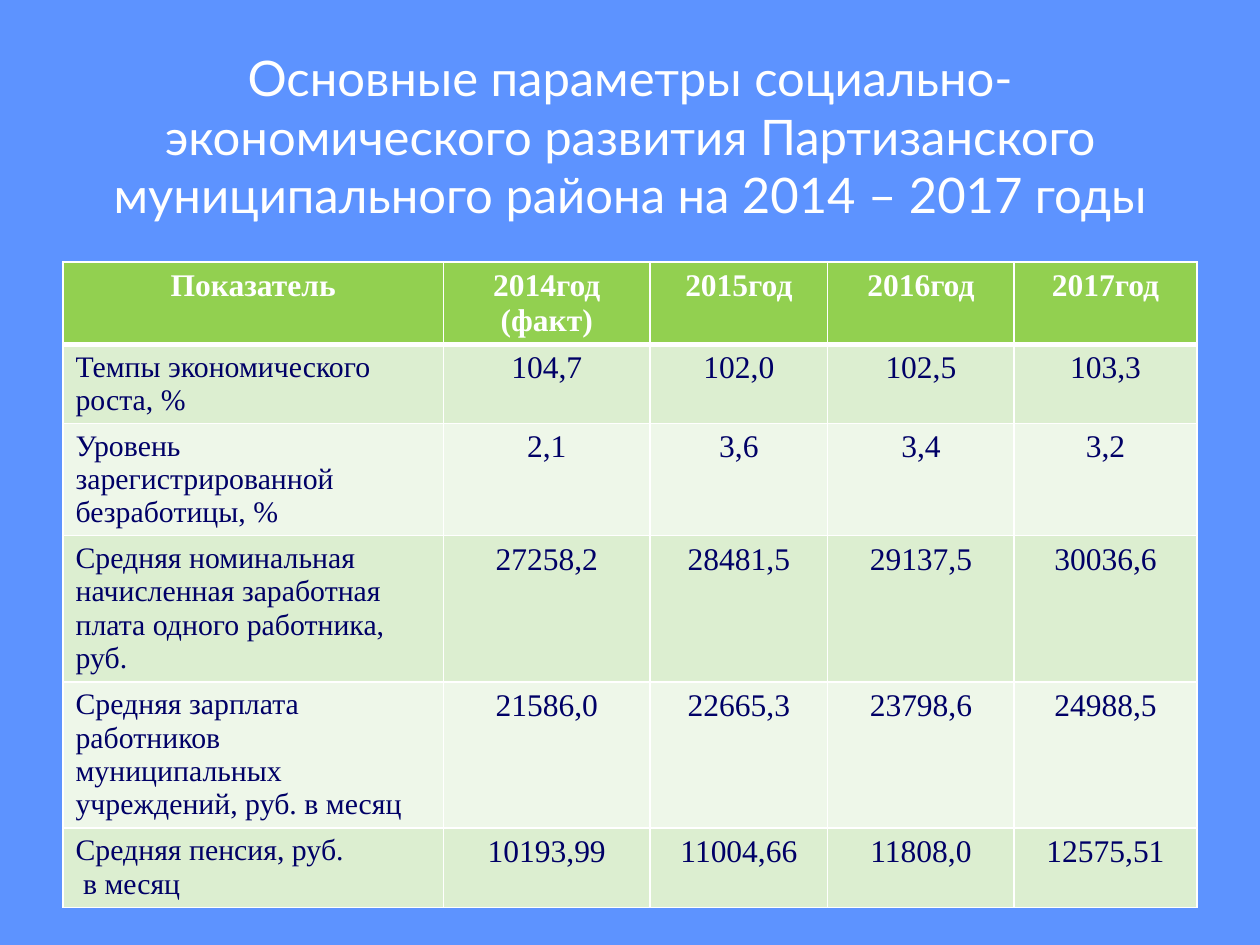
"""Build a slide with a table of district development indicators."""
import pptx
import pptx.dml.color
import pptx.enum.text
import pptx.oxml
import pptx.oxml.ns
import pptx.util

Inches = pptx.util.Inches
Pt = pptx.util.Pt
RGBColor = pptx.dml.color.RGBColor
ALIGN = pptx.enum.text.PP_ALIGN
ANCHOR = pptx.enum.text.MSO_ANCHOR

BACKGROUND = RGBColor(0x5D, 0x93, 0xFF)
WHITE = RGBColor(0xFF, 0xFF, 0xFF)
NAVY = RGBColor(0x00, 0x00, 0x66)
HEADER_GREEN = RGBColor(0x92, 0xD0, 0x50)
BAND_GREENS = (RGBColor(0xDC, 0xEE, 0xD0), RGBColor(0xEE, 0xF7, 0xE9))

TITLE = ("Основные параметры социально-экономического развития "
         "Партизанского муниципального района на 2014 – 2017 годы")
COLUMN_WIDTHS = (3.02, 1.64, 1.41, 1.48, 1.45)
ROW_HEIGHTS = (0.65, 0.62, 0.89, 1.16, 1.16, 0.63)
ROWS = (
    ("Показатель", "2014год\n(факт)", "2015год", "2016год", "2017год"),
    ("Темпы экономического роста, %", "104,7", "102,0", "102,5", "103,3"),
    ("Уровень зарегистрированной безработицы, %", "2,1", "3,6", "3,4", "3,2"),
    ("Средняя номинальная начисленная заработная плата одного работника, руб.",
     "27258,2", "28481,5", "29137,5", "30036,6"),
    ("Средняя зарплата работников муниципальных учреждений, руб. в месяц",
     "21586,0", "22665,3", "23798,6", "24988,5"),
    ("Средняя пенсия, руб.\n в месяц",
     "10193,99", "11004,66", "11808,0", "12575,51"),
)


def write_text(text_frame, text, size=18, color=NAVY, bold=False,
               align=ALIGN.CENTER, font="Times New Roman"):
    """Fill a text frame with one paragraph per line of text."""
    text_frame.text = text
    for paragraph in text_frame.paragraphs:
        paragraph.alignment = align
        for run in paragraph.runs:
            run.font.name = font
            run.font.size = Pt(size)
            run.font.bold = bold
            run.font.color.rgb = color


def set_border(cell, side, width, color=WHITE):
    """Draw a solid border on one side (L, R, T or B) of a cell."""
    properties = cell._tc.get_or_add_tcPr()
    properties.append(pptx.oxml.parse_xml(
        f'<a:ln{side} {pptx.oxml.ns.nsdecls("a")} w="{Pt(width)}">'
        f'<a:solidFill><a:srgbClr val="{color}"/></a:solidFill></a:ln{side}>'))


def format_cell(cell, row, column, text):
    """Write a cell and set its borders and fill for its place in the table."""
    header = row == 0
    label = column == 0 and not header
    write_text(cell.text_frame, text,
               size=17 if label else 18,
               color=WHITE if header else NAVY,
               bold=header,
               align=ALIGN.LEFT if label else ALIGN.CENTER)
    widths = {"L": 1, "R": 1, "T": 3 if row == 1 else 1, "B": 3 if header else 1}
    for side, width in widths.items():
        set_border(cell, side, width)
    cell.fill.solid()
    cell.fill.fore_color.rgb = HEADER_GREEN if header else BAND_GREENS[(row - 1) % 2]


def add_title(slide):
    """Place and format the title placeholder."""
    title = slide.shapes.title
    title.left, title.top = Inches(0.5), Inches(0.32)
    title.width, title.height = Inches(9), Inches(1.51)
    title.text_frame.word_wrap = True
    title.text_frame.vertical_anchor = ANCHOR.MIDDLE
    write_text(title.text_frame, TITLE, size=28, color=WHITE, font="Lato")


def add_indicator_table(slide):
    """Add the table of indicators by year."""
    table = slide.shapes.add_table(
        len(ROWS), len(COLUMN_WIDTHS), Inches(0.5), Inches(2.08),
        Inches(sum(COLUMN_WIDTHS)), Inches(sum(ROW_HEIGHTS))).table
    for column, width in zip(table.columns, COLUMN_WIDTHS):
        column.width = Inches(width)
    for row, height in zip(table.rows, ROW_HEIGHTS):
        row.height = Inches(height)
    for row_index, texts in enumerate(ROWS):
        for column_index, text in enumerate(texts):
            format_cell(table.cell(row_index, column_index),
                        row_index, column_index, text)


def main():
    """Build and save the presentation."""
    presentation = pptx.Presentation()
    presentation.slide_width = Inches(10)
    presentation.slide_height = Inches(7.5)
    slide = presentation.slides.add_slide(
        presentation.slide_layouts.get_by_name("Title Only"))
    slide.background.fill.solid()
    slide.background.fill.fore_color.rgb = BACKGROUND
    add_title(slide)
    add_indicator_table(slide)
    presentation.save("out.pptx")


if __name__ == "__main__":
    main()
